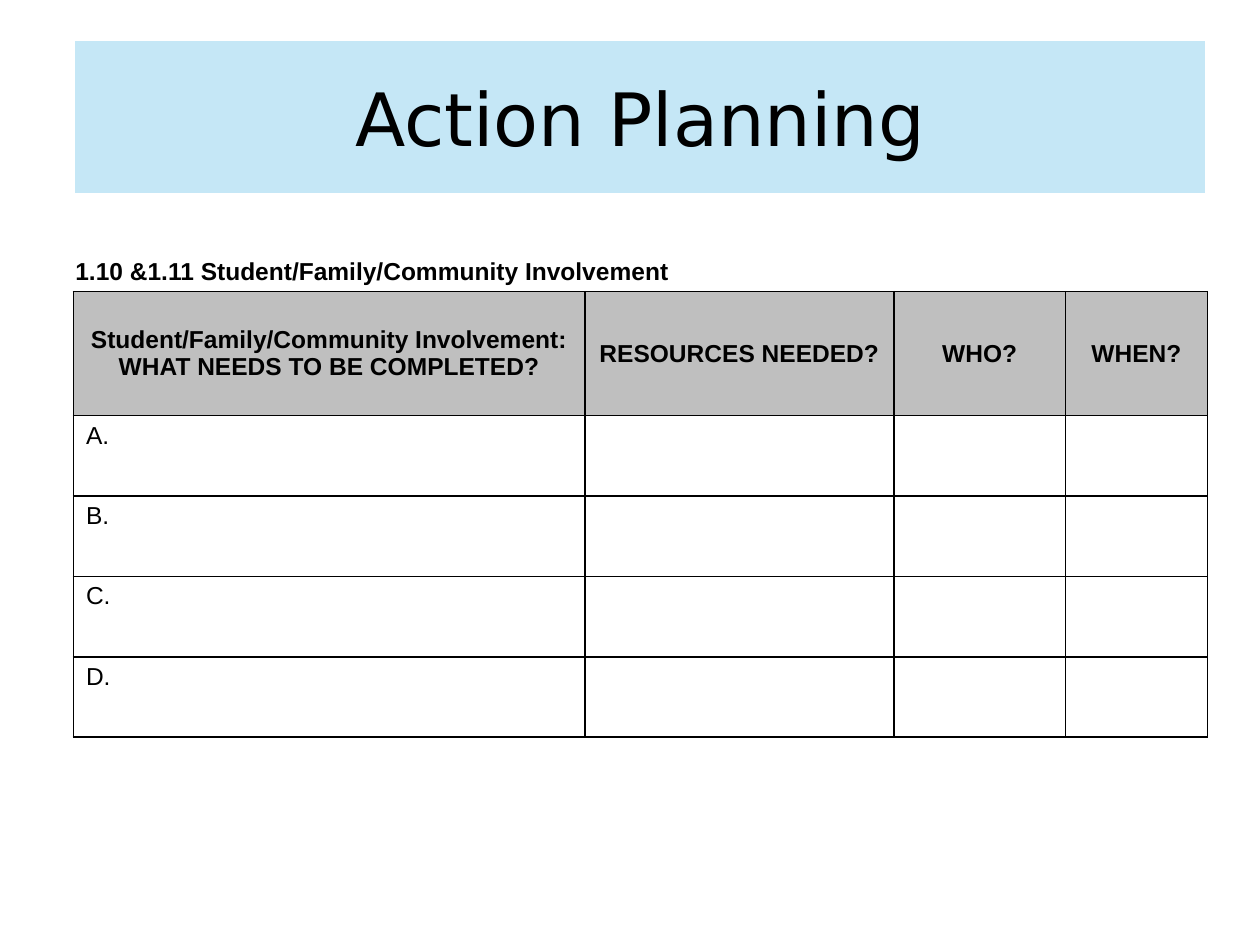
import pptx
import pptx.dml.color
import pptx.enum.text
import pptx.oxml
import pptx.oxml.ns
import pptx.util
from lxml import etree
from pptx.util import Cm

ALIGN = pptx.enum.text.PP_ALIGN
ANCHOR = pptx.enum.text.MSO_ANCHOR


def color(hex_string):
    return pptx.dml.color.RGBColor.from_string(hex_string)


def add_child(parent, tag, **attributes):
    return etree.SubElement(parent, pptx.oxml.ns.qn(tag), attributes)


class Deck:
    ink = "000000"
    heading_font = "DejaVu Sans"
    body_font = "Arial"
    body_size = 14

    def __init__(self, width, height):
        self.presentation = pptx.Presentation()
        self.presentation.slide_width = width
        self.presentation.slide_height = height
        self.slide = self.presentation.slides.add_slide(self.presentation.slide_layouts[5])

    def set_text(self, frame, text, font, size, bold=False, align=ALIGN.LEFT):
        frame.text = text
        for paragraph in frame.paragraphs:
            paragraph.alignment = align
            paragraph.font.name = font
            paragraph.font.size = pptx.util.Pt(size)
            paragraph.font.bold = bold
            paragraph.font.color.rgb = color(self.ink)

    def title(self, text, left, top, width, height):
        banner = self.slide.shapes.title
        banner.left, banner.top, banner.width, banner.height = left, top, width, height
        banner.fill.solid()
        banner.fill.fore_color.rgb = color("A9DCF2")
        tint = banner.element.spPr.find(".//" + pptx.oxml.ns.qn("a:srgbClr"))
        add_child(tint, "a:alpha", val="67000")
        banner.line.color.rgb = color("FFFFFF")
        banner.line.width = pptx.util.Pt(2.25)
        frame = banner.text_frame
        frame.auto_size = pptx.enum.text.MSO_AUTO_SIZE.NONE
        frame.vertical_anchor = ANCHOR.MIDDLE
        self.set_text(frame, text, self.heading_font, 42, align=ALIGN.CENTER)

    def label(self, text, left, top, width, height):
        frame = self.slide.shapes.add_textbox(left, top, width, height).text_frame
        frame.word_wrap = True
        frame.auto_size = pptx.enum.text.MSO_AUTO_SIZE.SHAPE_TO_FIT_TEXT
        self.set_text(frame, text, self.body_font, self.body_size, bold=True)

    def outline(self, cell):
        properties = cell._tc.get_or_add_tcPr()
        for side in ("a:lnL", "a:lnR", "a:lnT", "a:lnB"):
            border = add_child(properties, side, w="12700")
            add_child(add_child(border, "a:solidFill"), "a:srgbClr", val=self.ink)

    def table(self, rows, left, top, widths, heights):
        grid = self.slide.shapes.add_table(
            len(rows), len(widths), left, top, sum(widths), sum(heights)
        ).table
        for column, width in zip(grid.columns, widths):
            column.width = width
        for row, height in zip(grid.rows, heights):
            row.height = height
        for row_index, texts in enumerate(rows):
            header = row_index == 0
            for column_index, text in enumerate(texts):
                cell = grid.cell(row_index, column_index)
                self.outline(cell)
                cell.fill.solid()
                cell.fill.fore_color.rgb = color("BFBFBF" if header else "FFFFFF")
                cell.vertical_anchor = ANCHOR.MIDDLE if header else ANCHOR.TOP
                self.set_text(cell.text_frame, text, self.body_font, self.body_size,
                              bold=header, align=ALIGN.CENTER if header else ALIGN.LEFT)


def main():
    deck = Deck(Cm(25.4), Cm(19.05))
    left = Cm(1.48)
    deck.title("Action Planning", left, Cm(0.79), Cm(22.86), Cm(3.15))
    headings = [
        "Student/Family/Community Involvement:\nWHAT NEEDS TO BE COMPLETED?",
        "RESOURCES NEEDED?",
        "WHO?",
        "WHEN?",
    ]
    actions = [[f"{letter}.", "", "", ""] for letter in "ABCD"]
    deck.table(
        [headings] + actions,
        left,
        Cm(5.88),
        [Cm(10.31), Cm(6.23), Cm(3.46), Cm(2.86)],
        [Cm(2.5)] + [Cm(1.62)] * len(actions),
    )
    deck.label("1.10 &1.11 Student/Family/Community Involvement",
               Cm(1.27), Cm(5.03), Cm(13.06), Cm(0.86))
    deck.presentation.save("out.pptx")


if __name__ == "__main__":
    main()
